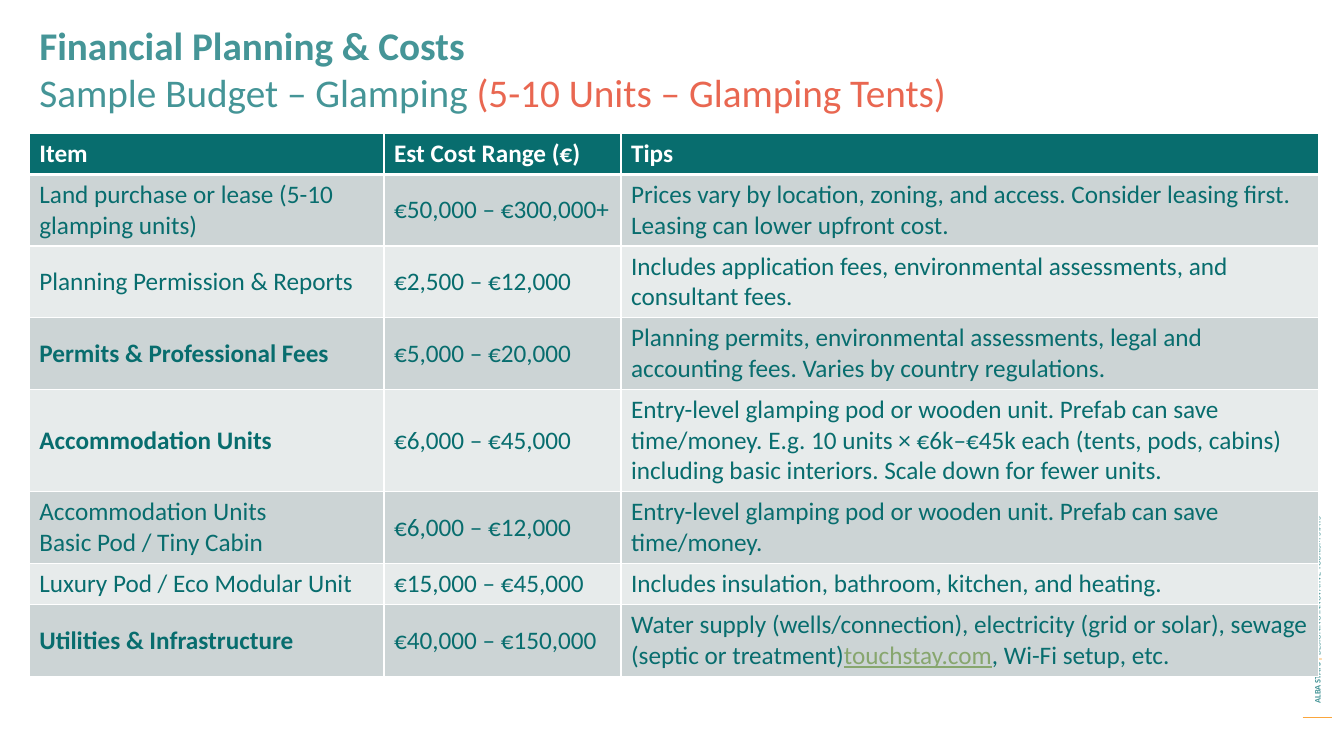
from lxml import etree
from pptx import Presentation
from pptx.dml.color import RGBColor
from pptx.enum.shapes import MSO_CONNECTOR
from pptx.enum.text import MSO_ANCHOR, MSO_AUTO_SIZE, PP_ALIGN
from pptx.oxml.ns import qn
from pptx.util import Inches, Pt

LEFT = PP_ALIGN.LEFT
TOP, MIDDLE = MSO_ANCHOR.TOP, MSO_ANCHOR.MIDDLE
NO_FIT = MSO_AUTO_SIZE.NONE
STRAIGHT = MSO_CONNECTOR.STRAIGHT

WHITE = RGBColor(0xFF, 0xFF, 0xFF)
TEAL = RGBColor(0x45, 0x95, 0x97)
DEEP_TEAL = RGBColor(0x08, 0x6D, 0x6E)
CORAL = RGBColor(0xE9, 0x67, 0x51)
AMBER = RGBColor(0xFB, 0xA6, 0x3B)
RULE_AMBER = RGBColor(0xFB, 0xA6, 0x3D)
LINK_GREEN = RGBColor(0x87, 0xA6, 0x6E)
BANDS = (RGBColor(0xE7, 0xEB, 0xEB), RGBColor(0xCC, 0xD4, 0xD5))

BOLD = {"bold": True}
LINK = {"color": LINK_GREEN, "underline": True}

TITLE = [
    [("Financial Planning & Costs", BOLD)],
    [("Sample Budget – Glamping ", {}), ("(5-10 Units – Glamping Tents)", {"color": CORAL})],
]
FOOTER = [[
    ("ALBA STAYS ", BOLD),
    ("| ", {"bold": True, "color": AMBER}),
    ("DESIGNING INNOVATIVE TOURISM STAYS", {}),
]]
COLUMN_WIDTHS = (26.4, 17.63, 51.91)
ROW_HEIGHT = 5.47
HEADINGS = ("Item", "Est Cost Range (€)", "Tips")
BUDGET = (
    ("Land purchase or lease (5-10 glamping units)", "€50,000 – €300,000+",
     "Prices vary by location, zoning, and access. Consider leasing first. "
     "Leasing can lower upfront cost."),
    ("Planning Permission & Reports", "€2,500 – €12,000",
     "Includes application fees, environmental assessments, and consultant fees."),
    ([[("Permits & Professional Fees", BOLD)]], "€5,000 – €20,000",
     "Planning permits, environmental assessments, legal and accounting fees. "
     "Varies by country regulations."),
    ([[("Accommodation Units", BOLD)]], "€6,000 – €45,000",
     "Entry-level glamping pod or wooden unit. Prefab can save time/money. "
     "E.g. 10 units × €6k–€45k each (tents, pods, cabins) including basic interiors. "
     "Scale down for fewer units."),
    ([[("Accommodation Units", {})], [("Basic Pod / Tiny Cabin", {})]], "€6,000 – €12,000",
     "Entry-level glamping pod or wooden unit. Prefab can save time/money."),
    ("Luxury Pod / Eco Modular Unit", "€15,000 – €45,000",
     "Includes insulation, bathroom, kitchen, and heating."),
    ([[("Utilities & Infrastructure", BOLD)]], "€40,000 – €150,000",
     [[("Water supply (wells/connection), electricity (grid or solar), "
        "sewage (septic or treatment)", {}),
       ("touchstay.com", LINK), (", Wi-Fi setup, etc.", {})]]),
)


class BudgetPage:
    """Draws on one page with a grid of 100 columns by 100 rows."""

    def __init__(self, deck):
        self.column = deck.slide_width / 100
        self.row = deck.slide_height / 100
        self.page = deck.slides.add_slide(deck.slide_layouts[5])
        self.style = {"name": "Calibri", "bold": False}

    def across(self, columns):
        return round(columns * self.column)

    def down(self, rows):
        return round(rows * self.row)

    def area(self, left, top, width, height):
        return self.across(left), self.down(top), self.across(width), self.down(height)

    def fill_text(self, frame, paragraphs, **base):
        for index, spans in enumerate(paragraphs):
            para = frame.add_paragraph() if index else frame.paragraphs[0]
            para.alignment = LEFT
            para.line_spacing = 1.0
            for text, extra in spans:
                span = para.add_run()
                span.text = text
                values = {**self.style, **base, **extra}
                span.font.color.rgb = values.pop("color")
                for name, value in values.items():
                    setattr(span.font, name, value)

    def frame(self, box, anchor):
        values = {"word_wrap": True, "auto_size": NO_FIT, "vertical_anchor": anchor}
        for name, value in values.items():
            setattr(box.text_frame, name, value)
        return box.text_frame

    def title(self, paragraphs, *area):
        box = self.page.shapes.title
        box.left, box.top, box.width, box.height = self.area(*area)
        self.fill_text(self.frame(box, TOP), paragraphs, size=Pt(28), color=TEAL)
        self.page.shapes.element.append(box.element)

    def side_text(self, paragraphs, *area):
        box = self.page.shapes.add_textbox(*self.area(*area))
        box.rotation = 270
        self.fill_text(self.frame(box, MIDDLE), paragraphs, size=Pt(6), color=TEAL)

    def rule(self, left, right, top):
        line = self.page.shapes.add_connector(
            STRAIGHT, self.across(left), self.down(top), self.across(right), self.down(top))
        line.line.color.rgb = RULE_AMBER
        line.line.width = Pt(0.75)
        etree.SubElement(line.element.spPr, qn("a:effectLst"))

    def borders(self, cell, **widths):
        properties = cell._tc.get_or_add_tcPr()
        for index, side in enumerate("LRTB"):
            line = etree.Element(qn(f"a:ln{side}"), w=str(Pt(widths.get(side, 1))))
            fill = etree.SubElement(line, qn("a:solidFill"))
            etree.SubElement(fill, qn("a:srgbClr"), val=str(WHITE))
            properties.insert(index, line)

    def table(self, rows, left, top):
        area = self.area(left, top, sum(COLUMN_WIDTHS), ROW_HEIGHT * len(rows))
        table = self.page.shapes.add_table(len(rows), len(COLUMN_WIDTHS), *area).table
        for column, width in zip(table.columns, COLUMN_WIDTHS):
            column.width = self.across(width)
        for y, row in enumerate(rows):
            table.rows[y].height = self.down(ROW_HEIGHT)
            header = y == 0
            for x, content in enumerate(row):
                cell = table.cell(y, x)
                cell.vertical_anchor = MIDDLE
                cell.fill.solid()
                cell.fill.fore_color.rgb = DEEP_TEAL if header else BANDS[y % 2]
                self.borders(cell, B=3 if header else 1, T=3 if y == 1 else 1)
                paragraphs = [[(content, {})]] if isinstance(content, str) else content
                self.fill_text(cell.text_frame, paragraphs, size=Pt(18), bold=header,
                               color=WHITE if header else DEEP_TEAL)


def main():
    deck = Presentation()
    deck.slide_width, deck.slide_height = Inches(13.33), Inches(7.5)
    page = BudgetPage(deck)
    page.rule(96.92, 99.1, 94.93)
    page.side_text(FOOTER, 76.37, 54.53, 43.29, 2.67)
    page.table((HEADINGS, *BUDGET), 2.18, 17.6)
    page.title(TITLE, 2.18, 2.13, 87.1, 11.73)
    deck.save("out.pptx")


if __name__ == "__main__":
    main()
